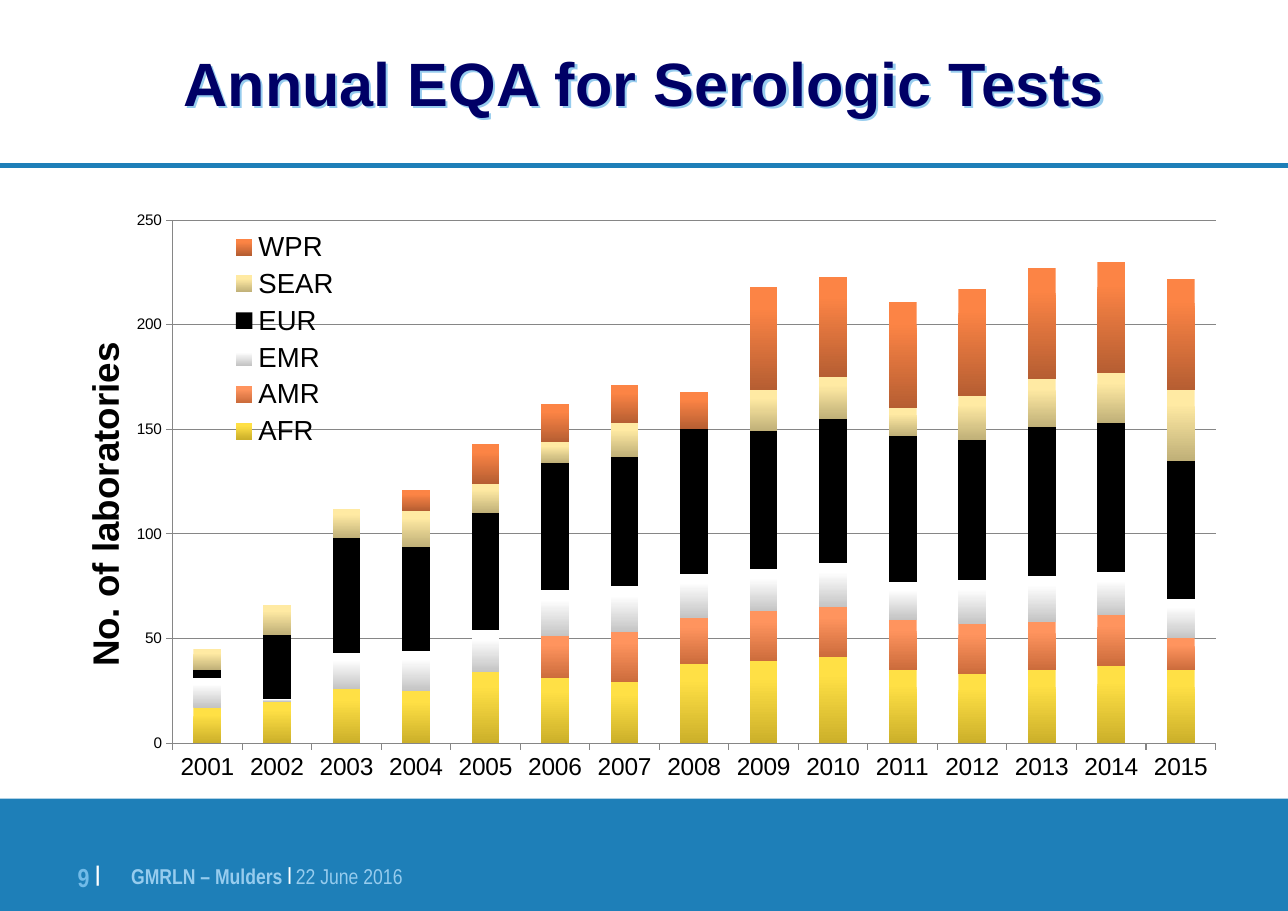
from dataclasses import dataclass

from pptx import Presentation
from pptx.chart.data import CategoryChartData
from pptx.dml.color import RGBColor
from pptx.enum.chart import XL_CHART_TYPE, XL_LEGEND_POSITION, XL_TICK_MARK
from pptx.enum.shapes import MSO_CONNECTOR, MSO_SHAPE
from pptx.enum.text import MSO_ANCHOR, PP_ALIGN
from pptx.oxml import parse_xml
from pptx.oxml.ns import nsdecls, qn
from pptx.util import Inches, Pt


@dataclass(frozen=True)
class Theme:
    font: str = "Arial"
    narrow: str = "Arial Narrow"
    band: str = "1E7FB8"
    title: str = "000066"
    title_glow: str = "96CCEE"
    footer: str = "96CCEE"
    number: str = "72BBE8"
    divider: str = "FFFFFF"
    text: str = "000000"
    grid: str = "868686"
    title_size: int = 40
    axis_title_size: int = 24
    legend_size: int = 18
    year_size: int = 16
    scale_size: int = 10
    footer_size: int = 14
    number_size: int = 17


# Region: (top colour, bottom colour, laboratories per year)
REGIONS = {
    "AFR": ("FFE045", "CCB02A",
            [17, 20, 26, 25, 34, 31, 29, 38, 39, 41, 35, 33, 35, 37, 35]),
    "AMR": ("FF945E", "CC6C3C",
            [None] * 5 + [20, 24, 22, 24, 24, 24, 24, 23, 24, 15]),
    "EMR": ("FFFFFF", "C4C4C4",
            [14, 1, 17, 19, 20, 22, 22, 21, 20, 21, 18, 21, 22, 21, 19]),
    "EUR": ("000000", "000000",
            [4, 31, 55, 50, 56, 61, 62, 69, 66, 69, 70, 67, 71, 71, 66]),
    "SEAR": ("FFEAA3", "C0B078",
             [10, 14, 14, 17, 14, 10, 16, None, 20, 20, 13, 21, 23, 24, 34]),
    "WPR": ("FC8445", "B65E32",
            [None] * 3 + [10, 19, 18, 18, 18, 49, 48, 51, 51, 53, 53, 53]),
}
YEARS = [str(year) for year in range(2001, 2016)]


def apply(target, **values):
    for key, value in values.items():
        setattr(target, key, value)


def style_font(font, color, **values):
    apply(font, **values)
    font.color.rgb = RGBColor.from_string(color)


def place(element, index, **shares):
    """Give a chart part a manual layout, in shares of the chart."""
    for old in element.findall(qn("c:layout")):
        element.remove(old)
    inner = '<c:layoutTarget val="inner"/>' if element.tag == qn("c:plotArea") else ""
    modes = "".join(f'<c:{side}Mode val="edge"/>' for side in "xy")
    sizes = "".join(f'<c:{key} val="{value}"/>' for key, value in shares.items())
    element.insert(index, parse_xml(
        f'<c:layout {nsdecls("c")}><c:manualLayout>{inner}{modes}{sizes}'
        "</c:manualLayout></c:layout>"))


class SlideBuilder:
    """Draws on one slide; lengths are columns and rows of a 100 x 100 grid."""

    def __init__(self, deck, theme):
        self.theme = theme
        self.column = deck.slide_width / 100
        self.row = deck.slide_height / 100
        self.slide = deck.slides.add_slide(deck.slide_layouts[6])

    def cells(self, x, y, width, height):
        return (round(x * self.column), round(y * self.row),
                round(width * self.column), round(height * self.row))

    def rule(self, y, color, width):
        left, top, right, _ = self.cells(0, y, 100, 0)
        rule = self.slide.shapes.add_connector(
            MSO_CONNECTOR.STRAIGHT, left, top, right, top)
        rule.line.color.rgb = RGBColor.from_string(color)
        rule.line.width = Pt(width)
        rule._element.spPr.append(parse_xml(f'<a:effectLst {nsdecls("a")}/>'))

    def band(self, area, color):
        band = self.slide.shapes.add_shape(MSO_SHAPE.RECTANGLE, *self.cells(*area))
        band.shadow.inherit = False
        band.fill.solid()
        band.fill.fore_color.rgb = RGBColor.from_string(color)
        band.line.fill.background()

    def text(self, area, runs, align=PP_ALIGN.LEFT, anchor=MSO_ANCHOR.TOP, glow=None):
        """Runs are (text, font, size, colour, bold, raised percent)."""
        box = self.slide.shapes.add_textbox(*self.cells(*area))
        apply(box.text_frame, word_wrap=True, vertical_anchor=anchor, margin_left=0,
              margin_right=0, margin_top=0, margin_bottom=0)
        paragraph = box.text_frame.paragraphs[0]
        paragraph.alignment = align
        for words, name, size, color, bold, raised in runs:
            run = paragraph.add_run()
            run.text = words
            style_font(run.font, color, name=name, size=Pt(size), bold=bold)
            if raised:
                run._r.get_or_add_rPr().set("baseline", str(raised * 1000))
        if glow:
            box._element.spPr.append(parse_xml(
                f'<a:effectLst {nsdecls("a")}><a:outerShdw dist="25400" dir="2700000">'
                f'<a:srgbClr val="{glow}"/></a:outerShdw></a:effectLst>'))

    def stacked_columns(self, area, categories, regions, axis_title):
        theme = self.theme
        data = CategoryChartData()
        data.categories = categories
        for region, (_, _, counts) in regions.items():
            data.add_series(region, counts)
        chart = self.slide.shapes.add_chart(
            XL_CHART_TYPE.COLUMN_STACKED, *self.cells(*area), data).chart
        apply(chart, has_title=False, has_legend=True)
        style_font(chart.font, theme.text, name=theme.font, size=Pt(theme.scale_size))
        place(chart._chartSpace.chart.plotArea, 0, x=0.094, y=0.061, w=0.893, h=0.854)

        # Columns
        plot = chart.plots[0]
        apply(plot, gap_width=150, overlap=100, vary_by_categories=False)
        for series, (top, bottom, _) in zip(plot.series, regions.values()):
            fill = series.format.fill
            if top == bottom:
                fill.solid()
                fill.fore_color.rgb = RGBColor.from_string(top)
                continue
            fill.gradient()
            fill.gradient_angle = 270
            for stop, color, position in zip(fill.gradient_stops, (top, bottom), (0.2, 1)):
                stop.color.rgb = RGBColor.from_string(color)
                stop.position = position

        # Axes
        years, scale = chart.category_axis, chart.value_axis
        apply(scale, minimum_scale=0, maximum_scale=250, major_unit=50,
              has_major_gridlines=True, has_title=True)
        for axis, size in ((years, theme.year_size), (scale, theme.scale_size)):
            axis.major_tick_mark = XL_TICK_MARK.OUTSIDE
            style_font(axis.tick_labels.font, theme.text, name=theme.font, size=Pt(size))
        for part in (years, scale, scale.major_gridlines):
            part.format.line.color.rgb = RGBColor.from_string(theme.grid)
            part.format.line.width = Pt(0.75)
        heading = scale.axis_title.text_frame
        heading.text = axis_title
        style_font(heading.paragraphs[0].runs[0].font, theme.text, name=theme.font,
                   size=Pt(theme.axis_title_size), bold=True)
        place(scale.axis_title._element, 1, x=0.01, y=0.25)

        # Legend
        legend = chart.legend
        apply(legend, position=XL_LEGEND_POSITION.RIGHT, include_in_layout=False)
        style_font(legend.font, theme.text, name=theme.font, size=Pt(theme.legend_size))
        place(legend._element, 1, x=0.14, y=0.07, w=0.1, h=0.37)


def main():
    deck = Presentation()
    apply(deck, slide_width=Inches(11.69), slide_height=Inches(8.27))
    theme = Theme()
    page = SlideBuilder(deck, theme)

    # Frame
    page.rule(18.14, theme.band, 3)
    page.band((0, 87.67, 100, 12.33), theme.band)

    # Footer
    page.text((10.18, 93.71, 46.45, 6.29), [
        ("GMRLN – Mulders ", theme.narrow, theme.footer_size, theme.footer, True, 0),
        ("| ", theme.narrow, 20, theme.divider, True, 12),
        ("22 June 2016", theme.narrow, theme.footer_size, theme.footer, False, 0),
    ])
    page.text((3.93, 93.35, 3.85, 4.84), [
        ("9 ", theme.narrow, theme.number_size, theme.number, True, 0),
        ("|", theme.narrow, 24, theme.divider, True, 14),
    ], align=PP_ALIGN.RIGHT)

    # Title
    page.text((0, 0, 100, 18.02), [
        ("Annual EQA for Serologic Tests", theme.font, theme.title_size,
         theme.title, True, 0),
    ], align=PP_ALIGN.CENTER, anchor=MSO_ANCHOR.MIDDLE, glow=theme.title_glow)

    # Laboratories by region and year
    page.stacked_columns((4.88, 20.07, 90.68, 67.23), YEARS, REGIONS,
                         "No. of laboratories")
    deck.save("out.pptx")


if __name__ == "__main__":
    main()
